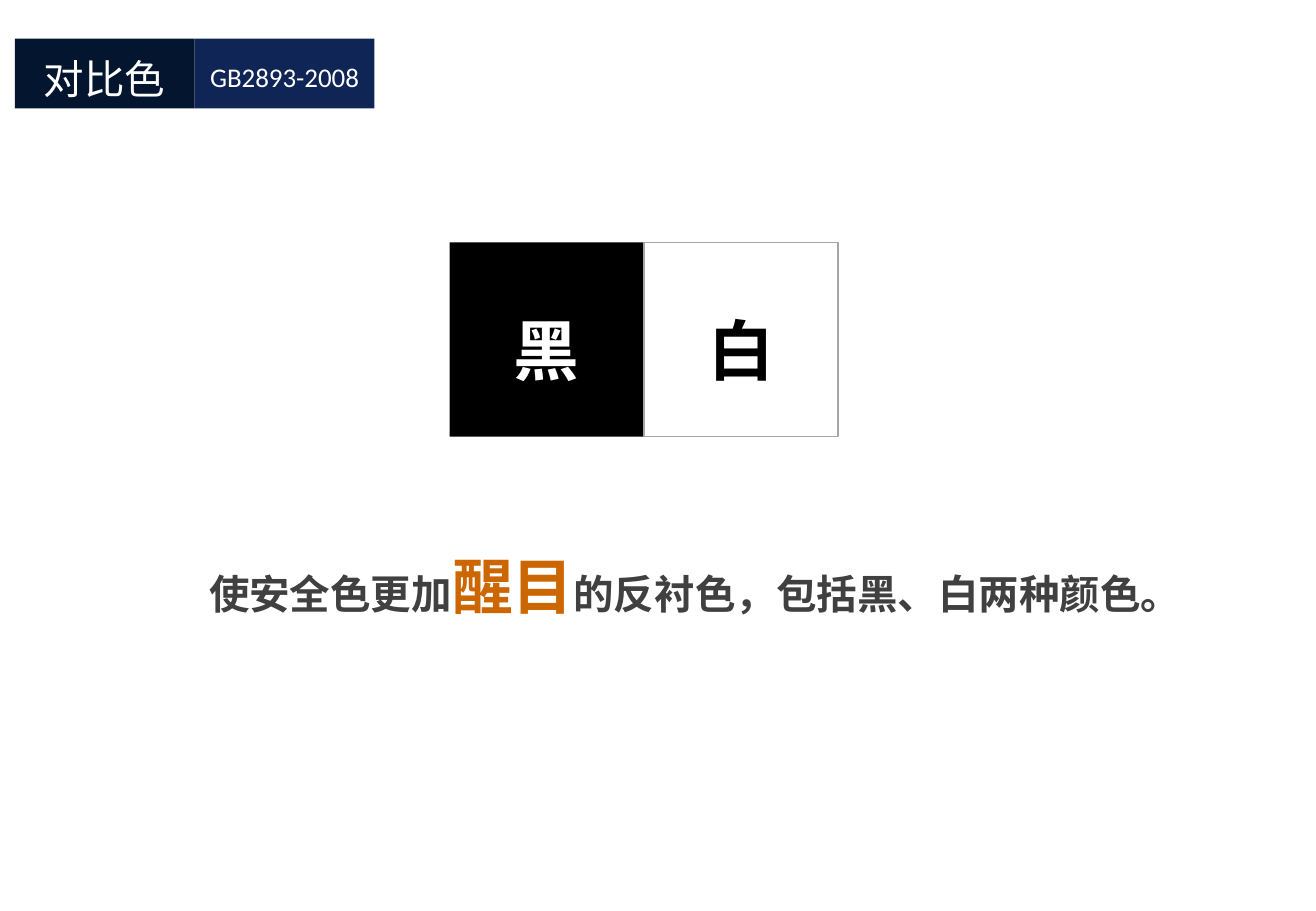
from pptx import Presentation
from pptx.dml.color import RGBColor
from pptx.enum.shapes import MSO_SHAPE
from pptx.enum.text import MSO_ANCHOR, PP_ALIGN
from pptx.oxml.ns import qn
from pptx.util import Cm, Pt

CJK, LATIN = "Noto Sans CJK SC", "Calibri"

# Content: text, fill, line, top inset in cm, text format
HEADER = [
    ("对比色", "04152F", None, 0.32, dict(size=24, name=CJK, color="FFFFFF")),
    ("GB2893-2008", "0F2556", None, 0.45, dict(size=16, name=LATIN, color="FFFFFF")),
]
SWATCHES = [
    ("黑", "000000", None, 1.4, dict(size=39, name=CJK, color="FFFFFF", bold=True)),
    ("白", None, "A6A6A6", 1.4, dict(size=39, name=CJK, color="000000", bold=True)),
]
PLAIN = dict(size=24, name=CJK, color="404040", bold=True)
ACCENT = dict(PLAIN, size=36, color="CC6600")
CAPTION = [
    ("使安全色更加", PLAIN),
    ("醒目", ACCENT),
    ("的反衬色，包括黑、白两种颜色。", PLAIN),
]

# Layout in cm: left, top, cell width, cell height
ROWS = [
    (HEADER, (0.31, 0.81, 3.76, 1.46)),
    (SWATCHES, (9.4, 5.07, 4.06, 4.06)),
]
CAPTION_BOX = (4.37, 11.48, 20.4, 1.35)


def rgb(value):
    return RGBColor.from_string(value)


def add_run(p, text, fmt):
    r = p.add_run()
    r.text = text
    values = dict(fmt, size=Pt(fmt["size"]))
    r.font.color.rgb = rgb(values.pop("color"))
    for key, value in values.items():
        setattr(r.font, key, value)
    # East Asian characters take their font from a:ea
    ea = r._r.get_or_add_rPr().makeelement(qn("a:ea"), {"typeface": fmt["name"]})
    r.font._element.find(qn("a:latin")).addnext(ea)


def prepare_frame(tf, top=0):
    frame = dict(margin_left=0, margin_right=0, margin_top=Cm(top),
                 margin_bottom=0, word_wrap=True, vertical_anchor=MSO_ANCHOR.TOP)
    for key, value in frame.items():
        setattr(tf, key, value)
    return tf.paragraphs[0]


def add_cell(s, box, text, fill, line, top, fmt):
    sp = s.shapes.add_shape(MSO_SHAPE.RECTANGLE, *map(Cm, box))
    sp.shadow.inherit = False
    if fill:
        sp.fill.solid()
        sp.fill.fore_color.rgb = rgb(fill)
    else:
        sp.fill.background()
    if line:
        sp.line.color.rgb = rgb(line)
        sp.line.width = Pt(0.96)
    else:
        sp.line.fill.background()
    p = prepare_frame(sp.text_frame, top)
    p.alignment = PP_ALIGN.CENTER
    add_run(p, text, fmt)


def main():
    prs = Presentation()
    prs.slide_width, prs.slide_height = Cm(27.51), Cm(19.05)
    s = prs.slides.add_slide(prs.slide_layouts[6])

    # Header bar and colour swatches
    for cells, (left, top, width, height) in ROWS:
        for i, cell in enumerate(cells):
            add_cell(s, (left + i * width, top, width, height), *cell)

    # Caption
    caption = s.shapes.add_textbox(*map(Cm, CAPTION_BOX))
    p = prepare_frame(caption.text_frame)
    for text, fmt in CAPTION:
        add_run(p, text, fmt)

    prs.save("out.pptx")


if __name__ == "__main__":
    main()
